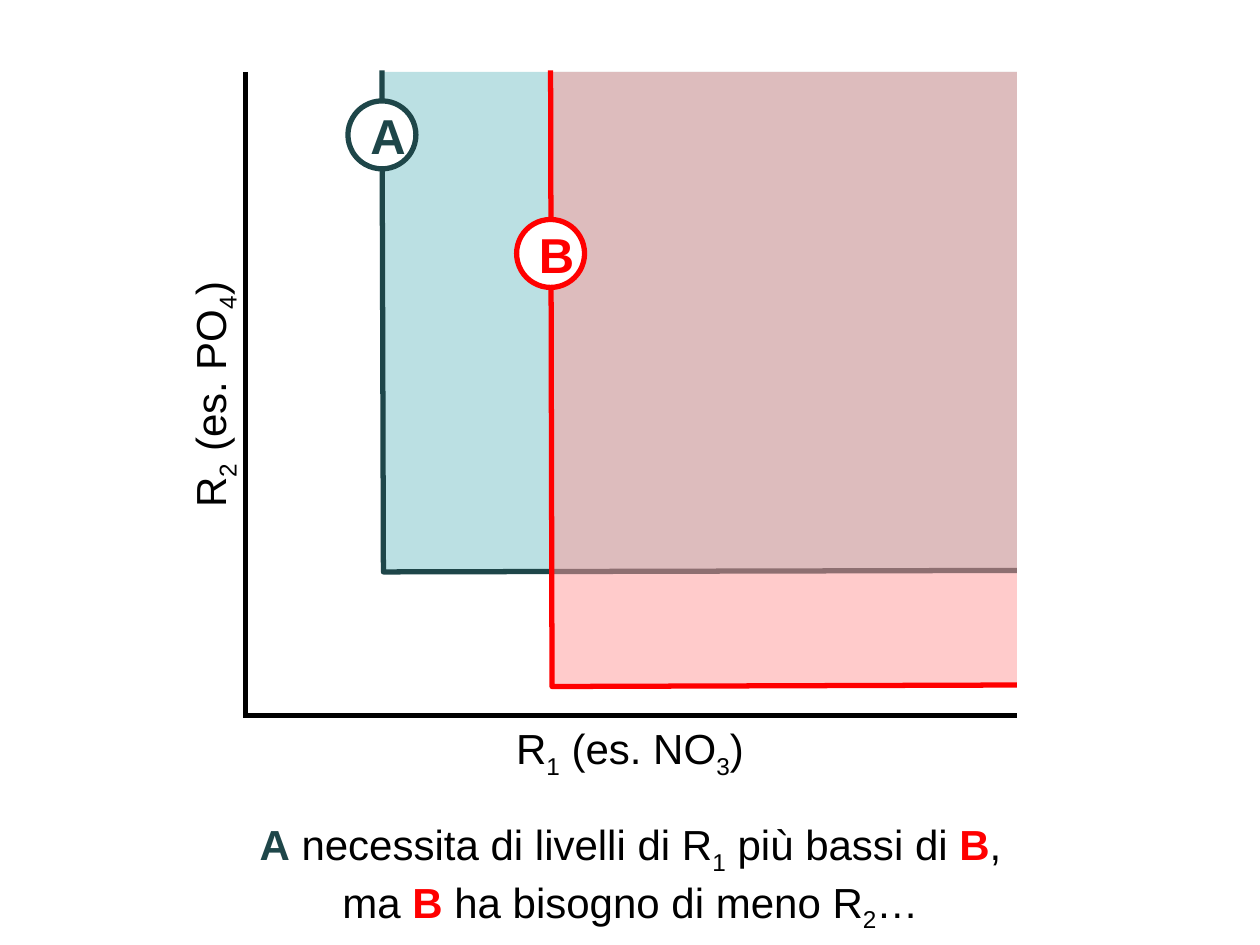
from pptx import Presentation
from pptx.dml.color import RGBColor
from pptx.enum.shapes import MSO_CONNECTOR as Line, MSO_SHAPE as Preset
from pptx.enum.text import MSO_ANCHOR as Anchor, PP_ALIGN as Align
from pptx.oxml.ns import qn
from pptx.util import Cm, Pt
from lxml.etree import SubElement

COLORS = {"black": "000000", "white": "FFFFFF", "A": "1E4649", "B": "FF0000",
          "area A": "BBE0E3", "area B": "FF9999"}

# Plot frame and species, in cm
LEFT, TOP, RIGHT, BOTTOM = 4.95, 1.45, 20.5, 14.43
DIAMETER, TILT = 1.37, 0.03
SPECIES = [  # name, minimum R1 (x), minimum R2 (y), badge height, opacity in %
    ("A", 7.7, 11.53, 2.72, 100),
    ("B", 11.1, 13.84, 5.11, 50),
]

# Text: box, rotation, lines of (words, style)
TEXTS = [
    ((7.9, 14.45, 9.6, 1.3), 0,
     [[("R", ""), ("1", "sub"), (" (es. NO", ""), ("3", "sub"), (")", "")]]),
    ((-0.58, 7.32, 9.6, 1.27), 270,
     [[("R", ""), ("2", "sub"), (" (es. PO", ""), ("4", "sub"), (")", "")]]),
    ((2.21, 16.38, 21, 2.31), 0,
     [[("A", "A"), (" necessita di livelli di R", ""), ("1", "sub"),
       (" più bassi di ", ""), ("B", "B"), (",", "")],
      [("ma ", ""), ("B", "B"), (" ha bisogno di meno R", ""), ("2", "sub"), ("…", "")]]),
]


def color(name):
    return RGBColor.from_string(COLORS[name])


def style_font(span, size, name, bold=False):
    font = span.font
    font.name, font.size, font.bold = "Arial", Pt(size), bold
    font.color.rgb = color(name)


def style_shape(shape, fill=None, line=None):
    shape.shadow.inherit = False
    if fill:
        shape.fill.solid()
        shape.fill.fore_color.rgb = color(fill)
    else:
        shape.fill.background()
    if line:
        shape.line.color.rgb = color(line)
        shape.line.width = Pt(3)
    else:
        shape.line.fill.background()


def add_axis(page, *ends):
    axis = page.shapes.add_connector(Line.STRAIGHT, *map(Cm, ends))
    axis.line.color.rgb = color("black")
    axis.line.width = Pt(3)
    SubElement(axis._element.spPr, qn("a:effectLst"))


def add_species(page, name, x, y, badge_y, opacity):
    # Area where the species can live
    area = page.shapes.add_shape(Preset.RECTANGLE, Cm(x), Cm(TOP), Cm(RIGHT - x), Cm(y - TOP))
    style_shape(area, fill="area " + name)
    if opacity < 100:
        tint = area.fill._xPr.find(qn("a:solidFill"))[0]
        SubElement(tint, qn("a:alpha")).set("val", str(opacity * 1000))

    # Zero growth isocline
    builder = page.shapes.build_freeform(Cm(x), Cm(TOP - TILT))
    builder.add_line_segments([(Cm(x + TILT), Cm(y)), (Cm(RIGHT), Cm(y - TILT))], close=False)
    style_shape(builder.convert_to_shape(), line=name)

    # Round badge
    badge = page.shapes.add_shape(Preset.OVAL, Cm(x - DIAMETER / 2), Cm(badge_y - DIAMETER / 2),
                                  Cm(DIAMETER), Cm(DIAMETER))
    style_shape(badge, fill="white", line=name)
    frame = badge.text_frame
    frame.text = name
    frame.vertical_anchor = Anchor.MIDDLE
    para = frame.paragraphs[0]
    para.alignment = Align.CENTER
    style_font(para.runs[0], 28, name, bold=True)


def add_text(page, place, rotation, lines):
    box = page.shapes.add_textbox(*map(Cm, place))
    box.rotation = rotation
    box.text_frame.word_wrap = True
    para = box.text_frame.paragraphs[0]
    para.alignment = Align.CENTER
    for number, line in enumerate(lines):
        if number:
            para.add_line_break()
        for words, style in line:
            span = para.add_run()
            span.text = words
            is_species = style in ("A", "B")
            style_font(span, 24, style if is_species else "black", is_species)
            if style == "sub":
                span.font._element.set("baseline", "-25000")


def main():
    deck = Presentation()
    deck.slide_width, deck.slide_height = Cm(25.4), Cm(19.05)
    page = deck.slides.add_slide(deck.slide_layouts[6])
    add_axis(page, LEFT, TOP, LEFT, BOTTOM)
    add_axis(page, RIGHT, BOTTOM, LEFT - 0.05, BOTTOM)
    for species in SPECIES:
        add_species(page, *species)
    for text in TEXTS:
        add_text(page, *text)
    deck.save("out.pptx")


if __name__ == "__main__":
    main()
